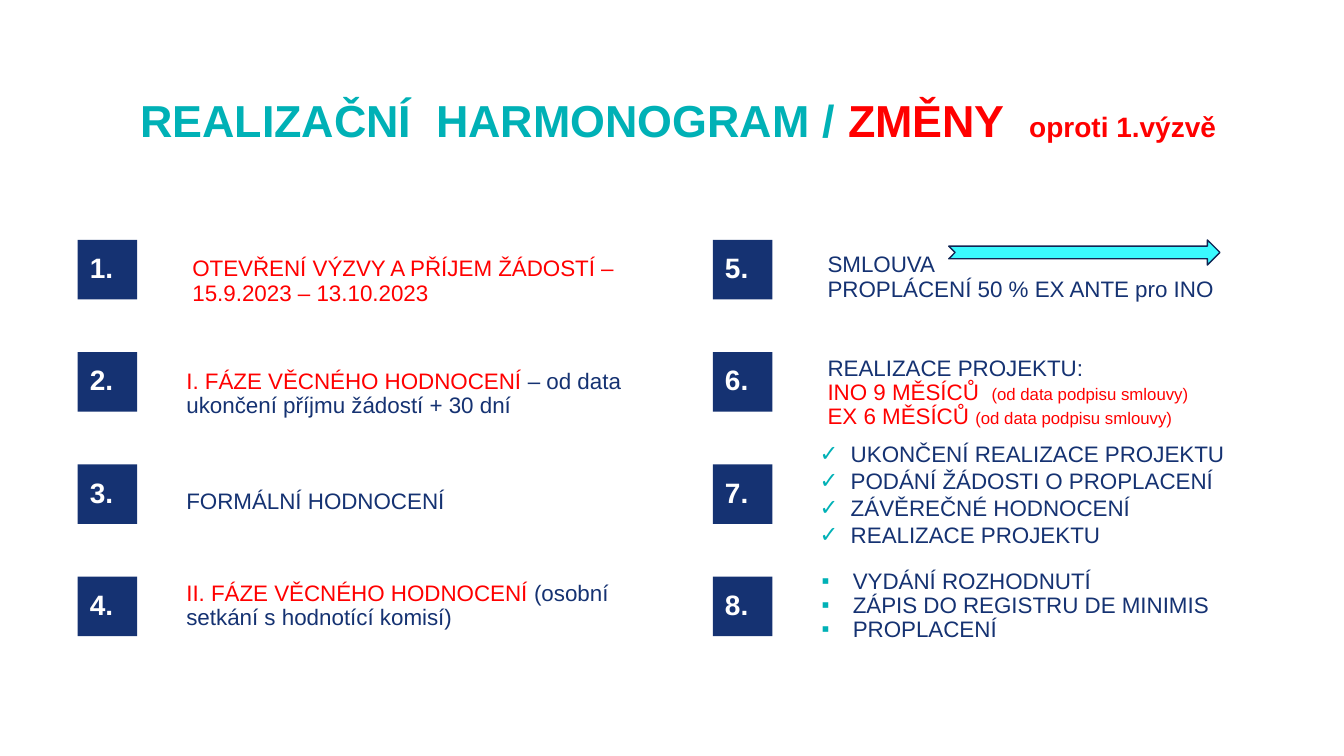
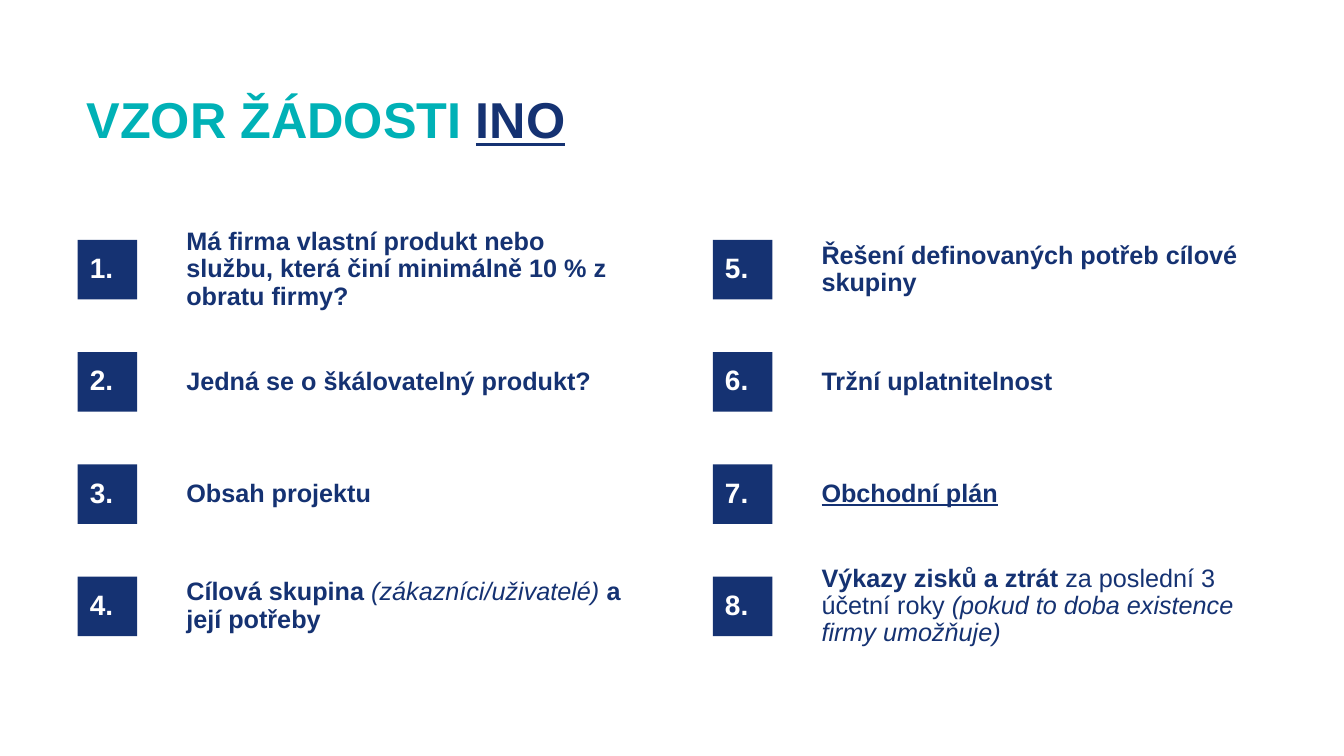
from lxml import etree
from pptx import Presentation
from pptx.dml.color import RGBColor
from pptx.enum.shapes import MSO_SHAPE
from pptx.enum.text import MSO_ANCHOR, PP_ALIGN
from pptx.oxml.ns import qn
from pptx.util import Inches, Pt

BOX, ARROW = MSO_SHAPE.RECTANGLE, MSO_SHAPE.NOTCHED_RIGHT_ARROW
MIDDLE, LEFT, CENTER = MSO_ANCHOR.MIDDLE, PP_ALIGN.LEFT, PP_ALIGN.CENTER

COLORS = {
    "navy": "153272", "teal": "00B1B6", "red": "FF0000",
    "white": "FFFFFF", "cyan": "3AFAFF", "edge": "102554",
}
FONT = "Arial"
TITLE = {"size": Pt(36), "bold": True, "color": "teal"}
BADGE = {"size": Pt(20), "bold": True, "color": "white"}
PLAIN = {"size": Pt(16), "color": "navy"}
STRONG = {"size": Pt(18), "bold": True, "color": "navy"}
RED = {"color": "red"}
NOTE = {"color": "red", "size": Pt(12)}
LINED = {"underline": True}
SLANT = {"bold": False, "italic": True}

ROWS = 4
TOP, SIDE = 2.38, 0.59
STEP = (5.72 - TOP) / (ROWS - 1)
COLUMNS = (0.77, 7.07)
GAP = 0.98
TALL, WIDE = 0.79, 4.53

# Each item: its lines, each a list of (text, format) runs, then its options.
PLAN = [
    ([[("OTEVŘENÍ VÝZVY A PŘÍJEM ŽÁDOSTÍ – 15.9.2023 – 13.10.2023", RED)]],
     {"dx": 0.06, "dy": 0.12}),
    ([[("I. FÁZE VĚCNÉHO HODNOCENÍ ", RED),
       ("– od data ukončení příjmu žádostí + 30 dní", {})]], {"dy": 0.12}),
    ([[("FORMÁLNÍ HODNOCENÍ", {})]], {"dy": 0.08}),
    ([[("II. FÁZE VĚCNÉHO HODNOCENÍ ", RED),
       ("(osobní setkání s hodnotící komisí)", {})]], {}),
    ([[("SMLOUVA", {})], [("PROPLÁCENÍ 50 % EX ANTE pro INO", {})]],
     {"dx": 0.06, "dy": 0.08}),
    ([[("REALIZACE PROJEKTU:", {})],
      [("INO 9 MĚSÍCŮ  ", RED), ("(od data podpisu smlouvy)", NOTE)],
      [("EX 6 MĚSÍCŮ ", RED), ("(od data podpisu smlouvy)", NOTE)]],
     {"dx": 0.06, "dy": 0.11}),
    ([[("UKONČENÍ REALIZACE PROJEKTU", {})],
      [("PODÁNÍ ŽÁDOSTI O PROPLACENÍ", {})],
      [("ZÁVĚREČNÉ HODNOCENÍ", {})],
      [("REALIZACE PROJEKTU", {})]],
     {"dx": -0.02, "mark": "✓", "space": 1.0}),
    ([[("VYDÁNÍ ROZHODNUTÍ", {})],
      [("ZÁPIS DO REGISTRU DE MINIMIS", {})],
      [("PROPLACENÍ", {})]], {"mark": "▪"}),
]
FORM = [
    ([[("Má firma vlastní produkt nebo službu, která činí minimálně "
        "10 % z obratu firmy?", {})]], {}),
    ([[("Jedná se o škálovatelný produkt?", {})]], {}),
    ([[("Obsah projektu", {})]], {}),
    ([[("Cílová skupina ", {}), ("(zákazníci/uživatelé) ", SLANT),
       ("a její potřeby", {})]], {}),
    ([[("Řešení definovaných potřeb cílové skupiny", {})]], {}),
    ([[("Tržní uplatnitelnost", {})]], {}),
    ([[("Obchodní plán", LINED)]], {}),
    ([[("Výkazy zisků a ztrát ", {}),
       ("za poslední 3 účetní roky ", {"bold": False}),
       ("(pokud to doba existence firmy umožňuje)", SLANT)]], {}),
]


def tint(name):
    return RGBColor.from_string(COLORS[name])


def style(font, form):
    font.name = FONT
    for key, value in form.items():
        if key == "color":
            font.color.rgb = tint(value)
        else:
            setattr(font, key, value)


def bullet(para, mark):
    """Give the paragraph a teal bullet with a hanging indent."""
    props = para._p.get_or_add_pPr()
    hang = Inches(0.31)
    props.set("marL", str(hang))
    props.set("indent", str(-hang))
    shade = etree.SubElement(props, qn("a:buClr"))
    etree.SubElement(shade, qn("a:srgbClr"), val=COLORS["teal"])
    etree.SubElement(props, qn("a:buFont"), typeface=FONT)
    etree.SubElement(props, qn("a:buChar"), char=mark)


def write(frame, lines, base, mark=None, space=0.9, align=LEFT):
    frame.word_wrap = True
    frame.vertical_anchor = MIDDLE
    for index, line in enumerate(lines):
        para = frame.add_paragraph() if index else frame.paragraphs[0]
        if mark:
            bullet(para, mark)
        para.alignment = align
        para.line_spacing = space
        for text, form in line:
            run = para.add_run()
            run.text = text
            style(run.font, {**base, **form})


def label(slide, place, lines, base, **options):
    box = slide.shapes.add_textbox(*map(Inches, place))
    write(box.text_frame, lines, base, **options)


def solid(slide, kind, place, fill, edge=None):
    shape = slide.shapes.add_shape(kind, *map(Inches, place))
    shape.shadow.inherit = False
    shape.fill.solid()
    shape.fill.fore_color.rgb = tint(fill)
    if edge:
        shape.line.color.rgb = tint(edge)
        shape.line.width = Pt(1)
    else:
        shape.line.fill.background()
    return shape


def badge(slide, left, top, number):
    shape = solid(slide, BOX, (left, top, SIDE, SIDE), "navy")
    frame = shape.text_frame
    margins = {"left": 0.12, "right": 0.1, "top": 0, "bottom": 0}
    for side, value in margins.items():
        setattr(frame, "margin_" + side, Inches(value))
    write(frame, [[(f"{number}.", {})]], BADGE)


def item(slide, left, top, lines, base, dx=0, dy=0, **options):
    """Add text centred on its badge, moved by dx and dy."""
    place = (left + GAP + dx, top + (SIDE - TALL) / 2 + dy, WIDE, TALL)
    label(slide, place, lines, base, **options)


def page(deck, title, items, base, align=LEFT):
    """Add a slide with a title and numbered items in two columns."""
    slide = deck.slides.add_slide(deck.slide_layouts[6])
    label(slide, (0.76, 0.82, 11.81, TALL), [title], TITLE, align=align)
    for index, (lines, options) in enumerate(items):
        column, row = divmod(index, ROWS)
        left, top = COLUMNS[column], TOP + row * STEP
        badge(slide, left, top, index + 1)
        item(slide, left, top, lines, base, **options)
    return slide


def main():
    deck = Presentation()
    deck.slide_width, deck.slide_height = Inches(13.33), Inches(7.5)
    large = {"size": Pt(32)}
    plan = page(deck, [
        (" REALIZAČNÍ  HARMONOGRAM / ", large),
        ("ZMĚNY  ", {**large, **RED}),
        ("oproti 1.výzvě", {"size": Pt(20), **RED}),
    ], PLAN, PLAIN, CENTER)
    solid(plan, ARROW, (9.41, TOP, 2.69, 0.25), "cyan", "edge")
    page(deck, [
        ("VZOR ŽÁDOSTI ", {}), ("INO", {"color": "navy", **LINED}),
    ], FORM, STRONG)
    deck.save("out.pptx")


if __name__ == "__main__":
    main()
